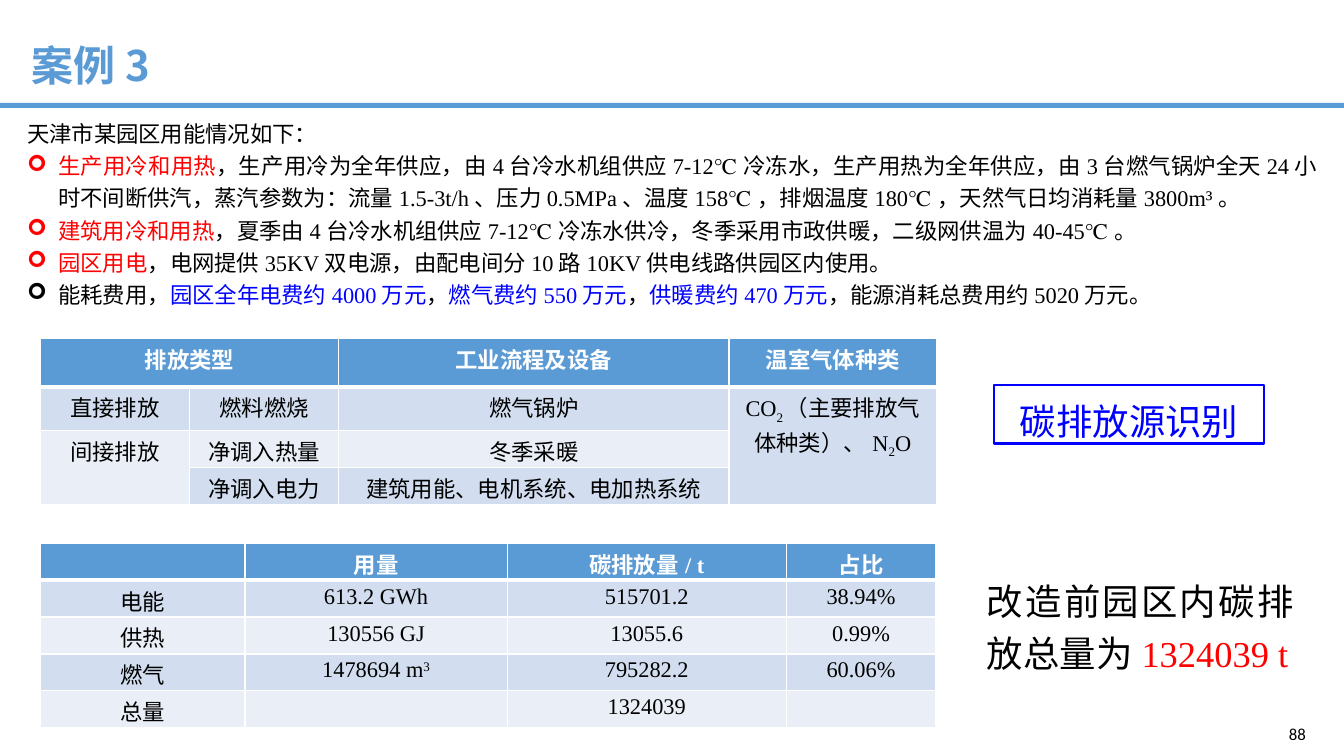
from lxml import etree
from pptx import Presentation
from pptx.dml.color import RGBColor
from pptx.enum.shapes import MSO_SHAPE
from pptx.enum.text import MSO_ANCHOR, PP_ALIGN
from pptx.oxml.ns import qn
from pptx.util import Inches, Pt

RECT = MSO_SHAPE.RECTANGLE
MIDDLE = MSO_ANCHOR.MIDDLE
CENTER, RIGHT, JUST = PP_ALIGN.CENTER, PP_ALIGN.RIGHT, PP_ALIGN.JUSTIFY
SERIF, SANS, PLAIN = "Times New Roman", "Noto Sans CJK SC", "Calibri"
HUES = {
    "head": "5B9BD5", "dark": "D2DEEF", "light": "EAEFF7",
    "white": "FFFFFF", "black": "000000", "red": "FF0000", "blue": "0000FF",
}


def hue(name):
    return RGBColor.from_string(HUES[name])


def add_run(para, text, size, color="black", face=SERIF, bold=False, base=0):
    run = para.add_run()
    run.text = text
    font = run.font
    font.size, font.name, font.bold = Pt(size), face, bold
    font.color.rgb = hue(color)
    props = font._element
    etree.SubElement(props, qn("a:ea")).set("typeface", SANS)
    if base:
        props.set("baseline", str(base * 1000))


def add_text(slide, box):
    frame = slide.shapes.add_textbox(*map(Inches, box)).text_frame
    frame.word_wrap = True
    return frame


def add_bullet(para, color):
    props = para._p.get_or_add_pPr()
    props.set("marL", str(Inches(0.31)))
    props.set("indent", str(-Inches(0.31)))
    tint = etree.SubElement(props, qn("a:buClr"))
    etree.SubElement(tint, qn("a:srgbClr")).set("val", HUES[color])
    etree.SubElement(props, qn("a:buFont")).set("typeface", "Wingdings")
    etree.SubElement(props, qn("a:buChar")).set("char", "➢")


def add_edges(cell, low):
    props = cell._tc.get_or_add_tcPr()
    for spot, (side, width) in enumerate((("L", 1), ("R", 1), ("T", 1), ("B", low))):
        line = etree.Element(qn(f"a:ln{side}"), w=str(Pt(width)))
        fill = etree.SubElement(line, qn("a:solidFill"))
        etree.SubElement(fill, qn("a:srgbClr")).set("val", HUES["white"])
        props.insert(spot, line)


def add_grid(slide, box, cols, highs, rows, spans=()):
    shape = slide.shapes.add_table(len(rows), len(cols), *map(Inches, box))
    grid = shape.table
    for col, width in zip(grid.columns, cols):
        col.width = Inches(width)
    for row, high in zip(grid.rows, highs):
        row.height = Inches(high)
    for top, left, bottom, right in spans:
        grid.cell(top, left).merge(grid.cell(bottom, right))
    for i, row in enumerate(rows):
        for j, item in enumerate(row):
            cell = grid.cell(i, j)
            cell.margin_top, cell.margin_bottom = Inches(0.04), 0
            cell.fill.solid()
            cell.fill.fore_color.rgb = hue("head" if i == 0 else "dark" if i % 2 else "light")
            add_edges(cell, 1 if i else 3)
            if not item:
                continue
            para = cell.text_frame.paragraphs[0]
            para.alignment = CENTER
            parts = [(item, 0)] if isinstance(item, str) else item
            for text, base in parts:
                add_run(para, text, 16, "black" if i else "white", bold=i == 0, base=base)


def add_title(slide, box):
    left, top, width, high = box
    frame = add_text(slide, (left + 0.17, top + 0.05, 10.94, 0.9))
    frame.margin_left, frame.margin_right = Inches(0.14), Inches(0.06)
    frame.margin_top = frame.margin_bottom = Inches(0.14)
    para = frame.paragraphs[0]
    para.line_spacing = 1.4
    add_run(para, "案例3", 30, "head", SANS, True)
    bar = slide.shapes.add_shape(RECT, *map(Inches, (left, top + high - 0.05, width, 0.05)))
    bar.shadow.inherit = False
    bar.fill.solid()
    bar.fill.fore_color.rgb = hue("head")
    bar.line.fill.background()


def add_facts(slide, box):
    facts = [
        [("天津市某园区用能情况如下：", "black")],
        [("生产用冷和用热", "red"),
         ("，生产用冷为全年供应，由4台冷水机组供应7-12℃冷冻水，生产用热为全年供应，"
          "由3台燃气锅炉全天24小时不间断供汽，蒸汽参数为：流量1.5-3t/h、压力0.5MPa、"
          "温度158℃，排烟温度180℃，天然气日均消耗量3800m³。", "black")],
        [("建筑用冷和用热", "red"),
         ("，夏季由4台冷水机组供应7-12℃冷冻水供冷，冬季采用市政供暖，"
          "二级网供温为40-45℃。", "black")],
        [("园区用电", "red"),
         ("，电网提供35KV双电源，由配电间分10路10KV供电线路供园区内使用。", "black")],
        [("能耗费用，", "black"), ("园区全年电费约4000万元", "blue"), ("，", "black"),
         ("燃气费约550万元", "blue"), ("，", "black"), ("供暖费约470万元", "blue"),
         ("，能源消耗总费用约5020万元。", "black")],
    ]
    frame = add_text(slide, box)
    for i, fact in enumerate(facts):
        para = frame.add_paragraph() if i else frame.paragraphs[0]
        para.alignment, para.line_spacing = JUST, 1.2
        if i:
            add_bullet(para, fact[0][1])
        for text, color in fact:
            add_run(para, text, 16, color)


def add_source(slide, box):
    left, top, width, high = box
    gas = [("CO", 0), ("2", -25), ("（主要排放气体种类）、N", 0), ("2", -25), ("O", 0)]
    rows = [
        ["排放类型", "", "工业流程及设备", "温室气体种类"],
        ["直接排放", "燃料燃烧", "燃气锅炉", gas],
        ["间接排放", "净调入热量", "冬季采暖", ""],
        ["", "净调入电力", "建筑用能、电机系统、电加热系统", ""],
    ]
    add_grid(slide, (left, top, 8.89, high), (1.48, 1.48, 3.87, 2.06),
             (0.48, 0.43, 0.37, 0.37), rows, ((0, 0, 0, 1), (1, 3, 3, 3), (2, 0, 3, 0)))
    place = (left + width - 2.68, top + 0.46, 2.68, 0.58)
    label = slide.shapes.add_shape(RECT, *map(Inches, place))
    label.shadow.inherit = False
    label.fill.background()
    label.line.color.rgb = hue("blue")
    label.line.width = Pt(1.5)
    frame = label.text_frame
    frame.word_wrap = True
    frame.vertical_anchor = MSO_ANCHOR.TOP
    para = frame.paragraphs[0]
    para.alignment, para.line_spacing = CENTER, 1.2
    add_run(para, "碳排放源识别", 26, "blue")


def add_total(slide, box):
    left, top, width, high = box
    rows = [
        ["", "用量", "碳排放量/ t", "占比"],
        ["电能", "613.2 GWh", "515701.2", "38.94%"],
        ["供热", "130556 GJ", "13055.6", "0.99%"],
        ["燃气", [("1478694 m", 0), ("3", 30)], "795282.2", "60.06%"],
        ["总量", "", "1324039", ""],
    ]
    add_grid(slide, (left, top, 8.89, high), (2.03, 2.6, 2.77, 1.48),
             [high / len(rows)] * len(rows), rows)
    frame = add_text(slide, (left + width - 3.24, top + 0.22, 3.24, 1.11))
    para = frame.paragraphs[0]
    para.alignment, para.line_spacing = JUST, 1.2
    add_run(para, "改造前园区内碳排放总量为", 26)
    add_run(para, "1324039 t", 26, "red")


def add_page(slide, box):
    frame = add_text(slide, box)
    frame.vertical_anchor = MIDDLE
    para = frame.paragraphs[0]
    para.alignment = RIGHT
    add_run(para, "88", 12, face=PLAIN)


def main():
    deck = Presentation()
    deck.slide_width, deck.slide_height = Inches(13.33), Inches(7.5)
    slide = deck.slides.add_slide(deck.slide_layouts[6])
    add_title(slide, (0, 0, 13.33, 1.07))
    add_facts(slide, (0.17, 1.09, 12.99, 2.04))
    add_source(slide, (0.4, 3.36, 12.14, 1.65))
    add_total(slide, (0.4, 5.39, 12.53, 1.83))
    add_page(slide, (10.05, 7.06, 3, 0.44))
    deck.save("out.pptx")


if __name__ == "__main__":
    main()
